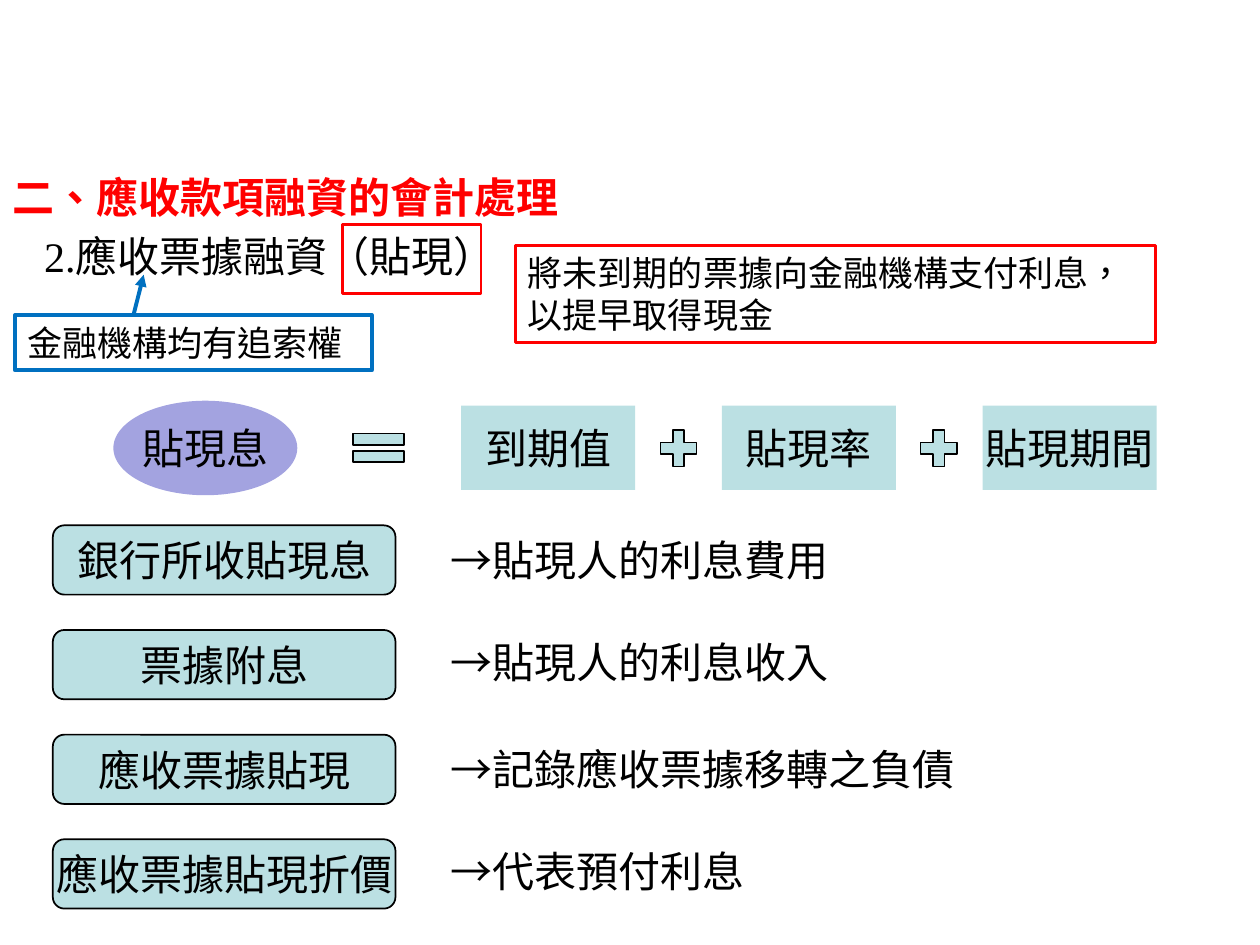
from lxml.etree import SubElement
from pptx import Presentation
from pptx.dml.color import RGBColor
from pptx.enum.lang import MSO_LANGUAGE_ID
from pptx.enum.shapes import MSO_CONNECTOR, MSO_SHAPE
from pptx.enum.text import MSO_ANCHOR, PP_ALIGN
from pptx.oxml.ns import qn
from pptx.util import Pt

SERIF, SANS = "Times New Roman", "Noto Sans CJK SC"
RED, BLUE, BLACK, TEAL, PURPLE = "FF0000", "0070C0", "000000", "BBE0E3", "A3A3E0"


def write(paragraph, text, name, size, colour=BLACK, bold=False):
    paragraph.text = text
    font = paragraph.font
    font.name, font.size, font.bold = name, Pt(size), bold
    font.language_id = MSO_LANGUAGE_ID.TRADITIONAL_CHINESE
    font.color.rgb = RGBColor.from_string(colour)


def add_box(kind, left, top, width, height, fill=None, line=None, weight=1, text=None):
    shape = page.shapes.add_shape(kind, Pt(left), Pt(top), Pt(width), Pt(height))
    shape.shadow.inherit = False
    if fill:
        shape.fill.solid()
        shape.fill.fore_color.rgb = RGBColor.from_string(fill)
    else:
        shape.fill.background()
    if line:
        shape.line.color.rgb = RGBColor.from_string(line)
        shape.line.width = Pt(weight)
    else:
        shape.line.fill.background()
    if text:
        frame = shape.text_frame
        frame.word_wrap = not fill
        frame.vertical_anchor = MSO_ANCHOR.MIDDLE if fill else MSO_ANCHOR.TOP
        paragraph = frame.paragraphs[0]
        paragraph.alignment = PP_ALIGN.CENTER if fill else PP_ALIGN.LEFT
        write(paragraph, text, SANS if fill else SERIF, 24 if fill else 20)


deck = Presentation()
deck.slide_width, deck.slide_height = Pt(720), Pt(540)
page = deck.slides.add_slide(deck.slide_layouts[1])
title, body = page.placeholders
title.element.getparent().remove(title.element)

body.left, body.top, body.width, body.height = Pt(0), Pt(94.3), Pt(697), Pt(425.5)
frame = body.text_frame
headings = [("二、應收款項融資的會計處理", RED, True, 0, 0), ("2.應收票據融資（貼現）", BLACK, False, 18, 4.8)]
for text, colour, bold, margin, space in headings:
    paragraph = frame.add_paragraph() if space else frame.paragraphs[0]
    properties = paragraph._p.get_or_add_pPr()
    properties.set("marL", str(Pt(margin)))
    properties.set("indent", "0")
    paragraph.space_before = Pt(space)
    SubElement(properties, qn("a:buNone"))
    write(paragraph, text, SERIF, 24, colour, bold)

add_box(MSO_SHAPE.RECTANGLE, 195.8, 128.2, 79.2, 39.6, line=RED, weight=1.5)
add_box(MSO_SHAPE.RECTANGLE, 294.5, 140.4, 365.8, 55.4, line=RED, weight=1.5,
        text="將未到期的票據向金融機構支付利息，以提早取得現金")
add_box(MSO_SHAPE.RECTANGLE, 8.6, 180, 203.8, 31.7, line=BLUE, weight=2.25,
        text="金融機構均有追索權")

arrow = page.shapes.add_connector(MSO_CONNECTOR.STRAIGHT, Pt(76.3), Pt(180), Pt(82.1), Pt(157))
arrow.line.color.rgb = RGBColor.from_string(BLUE)
arrow.line.width = Pt(2.25)
SubElement(arrow.line._get_or_add_ln(), qn("a:tailEnd"), type="triangle")
SubElement(arrow._element.spPr, qn("a:effectLst"))

add_box(MSO_SHAPE.OVAL, 64.8, 229, 105.1, 54, fill=PURPLE, text="貼現息")
for column, factor in enumerate(["到期值", "貼現率", "貼現期間"]):
    add_box(MSO_SHAPE.RECTANGLE, 263.5 + 149 * column, 231.8, 99.4, 48.2, fill=TEAL, text=factor)
add_box(MSO_SHAPE.MATH_EQUAL, 196.6, 241.9, 39.6, 28.1, fill=TEAL, line=BLACK)
for left in (373.7, 522.3):
    add_box(MSO_SHAPE.MATH_PLUS, left, 242.2, 28.1, 28.1, fill=TEAL, line=BLACK)

entries = [
    ("銀行所收貼現息", "→貼現人的利息費用", 301.7),
    ("票據附息", "→貼現人的利息收入", 360),
    ("應收票據貼現", "→記錄應收票據移轉之負債", 421.2),
    ("應收票據貼現折價", "→代表預付利息", 479.5),
]
for row, (label, meaning, top) in enumerate(entries):
    add_box(MSO_SHAPE.ROUNDED_RECTANGLE, 30.2, 300.2 + 59.8 * row, 195.8, 39.6,
            fill=TEAL, line=BLACK, text=label)
    box = page.shapes.add_textbox(Pt(250.6), Pt(top), Pt(311), Pt(36))
    box.text_frame.word_wrap = True
    write(box.text_frame.paragraphs[0], meaning, SANS, 24)

deck.save("out.pptx")
